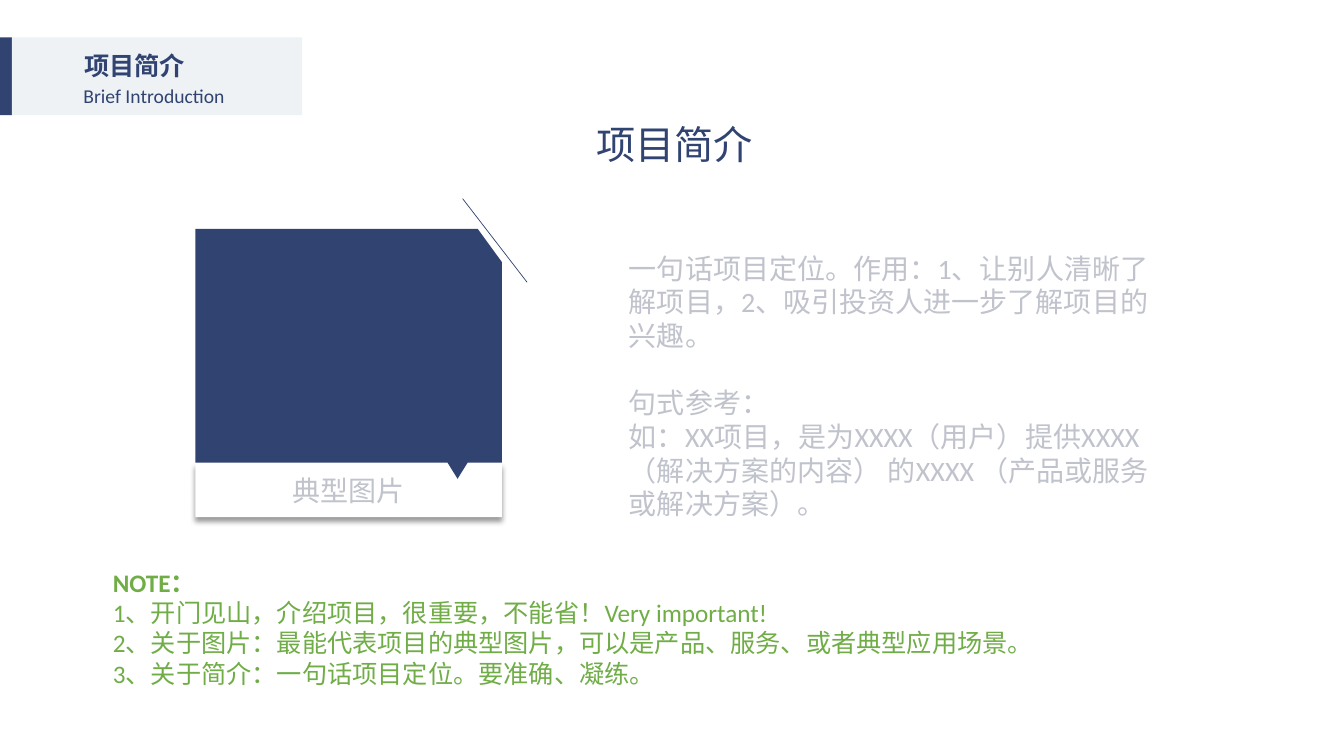
from lxml import etree
from pptx import Presentation
from pptx.dml.color import RGBColor
from pptx.enum.shapes import MSO_CONNECTOR, MSO_SHAPE
from pptx.enum.text import MSO_ANCHOR, MSO_AUTO_SIZE, PP_ALIGN
from pptx.oxml.ns import qn
from pptx.util import Inches, Pt

NAVY = RGBColor(0x30, 0x43, 0x71)
MIST = RGBColor(0xEE, 0xF2, 0xF5)
GREY = RGBColor(0xC0, 0xC2, 0xCC)
GREEN = RGBColor(0x70, 0xAD, 0x47)
WHITE = RGBColor(0xFF, 0xFF, 0xFF)
LATIN, HAN = "Calibri", "Noto Sans CJK SC"
LEFT, CENTER = PP_ALIGN.LEFT, PP_ALIGN.CENTER
TOP, MIDDLE = MSO_ANCHOR.TOP, MSO_ANCHOR.MIDDLE
NO_FIT = MSO_AUTO_SIZE.NONE
RECT, STRAIGHT = MSO_SHAPE.RECTANGLE, MSO_CONNECTOR.STRAIGHT
COLS, ROWS = 64, 36


class Deck:
    """Draws styled elements on the current slide, placed on a 64 by 36 grid."""

    def __init__(self):
        self.prs = Presentation()
        self.prs.slide_width, self.prs.slide_height = Inches(13.33), Inches(7.5)
        self.slide = self.prs.slides.add_slide(self.prs.slide_layouts[1])
        self.shapes = self.slide.shapes

    def at(self, col, row):
        return (int(self.prs.slide_width * col / COLS),
                int(self.prs.slide_height * row / ROWS))

    def box(self, col, row, cols, rows):
        return self.at(col, row) + self.at(cols, rows)

    def paint(self, sp, color):
        sp.shadow.inherit = False
        sp.fill.solid()
        sp.fill.fore_color.rgb = color
        sp.line.fill.background()
        return sp

    def set_text(self, sp, lines, size, color, font=LATIN, align=LEFT,
                 anchor=TOP, bold=False, wrap=True):
        tf = sp.text_frame
        tf.text = "\n".join(lines)
        tf.word_wrap, tf.auto_size, tf.vertical_anchor = wrap, NO_FIT, anchor
        for p in tf.paragraphs:
            p.alignment, p.space_before = align, Pt(0)
            p.font.size, p.font.name, p.font.bold = Pt(size), font, bold
            p.font.color.rgb = color
            for r in p.runs:
                r_pr = r._r.get_or_add_rPr()
                etree.SubElement(r_pr, qn("a:ea"), typeface=font)
        return tf

    def rect(self, *box, color):
        return self.paint(self.shapes.add_shape(RECT, *self.box(*box)), color)

    def polygon(self, points, color):
        start, *rest = [self.at(*point) for point in points]
        builder = self.shapes.build_freeform(*start)
        builder.add_line_segments(rest, close=True)
        return self.paint(builder.convert_to_shape(), color)

    def line(self, start, end, color, width):
        sp = self.shapes.add_connector(STRAIGHT, *self.at(*start), *self.at(*end))
        sp.line.color.rgb, sp.line.width = color, Pt(width)
        etree.SubElement(sp._element.spPr, qn("a:effectLst"))
        return sp

    def text(self, *box, lines, **style):
        return self.set_text(self.shapes.add_textbox(*self.box(*box)), lines, **style)

    def placeholder(self, idx, *box, lines, **style):
        sp = self.slide.placeholders[idx]
        sp.left, sp.top, sp.width, sp.height = self.box(*box)
        return self.set_text(sp, lines, **style)

    def remove_bullets(self, tf):
        for p in tf.paragraphs:
            p_pr = p._p.get_or_add_pPr()
            p_pr.set("marL", "0")
            p_pr.set("indent", "0")
            p_pr.find(qn("a:defRPr")).addprevious(etree.Element(qn("a:buNone")))

    def drop_shadow(self, sp):
        effects = sp._element.spPr.find(qn("a:effectLst"))
        shadow = etree.SubElement(effects, qn("a:outerShdw"), blurRad=str(Pt(4)),
                                  dist=str(Pt(3)), dir="5400000", rotWithShape="0")
        black = etree.SubElement(shadow, qn("a:srgbClr"), val="000000")
        etree.SubElement(black, qn("a:alpha"), val="40000")


def main():
    deck = Deck()

    deck.rect(-0.1, 1.78, 0.67, 3.7, color=NAVY)
    deck.rect(0.57, 1.78, 13.82, 3.7, color=MIST)
    deck.text(3.5, 2.16, 5.81, 1.92, lines=["项目简介"], size=18, color=NAVY,
              font=HAN, align=CENTER, bold=True, wrap=False)
    deck.text(3.5, 3.74, 10.42, 1.63, lines=["Brief Introduction"], size=14,
              color=NAVY)

    left, right, top, bottom = 9.31, 23.9, 10.9, 22.03
    caption = deck.rect(left, bottom, right - left, 2.59, color=WHITE)
    deck.drop_shadow(caption)
    deck.set_text(caption, ["典型图片"], 20, GREY, align=CENTER, anchor=MIDDLE)
    tip = 21.79
    panel = deck.polygon([(left, top), (22.75, top), (right, 12.48), (right, bottom),
                          (tip + 0.48, bottom), (tip, 22.8), (tip - 0.48, bottom),
                          (left, bottom)], NAVY)
    slash = deck.line((22.03, 9.46), (25.1, 13.44), NAVY, 0.5)
    deck.shapes.add_group_shape([caption, panel, slash])

    title = deck.placeholder(0, 20.54, 4.56, 23.18, 3.46, lines=["项目简介"], size=28,
                             color=NAVY, font=HAN, align=CENTER, anchor=MIDDLE)
    title.paragraphs[0].line_spacing = 1.5

    note = deck.text(4.9, 26.78, 56.78, 6.29, size=18, color=GREEN, lines=[
        "NOTE：",
        "1、开门见山，介绍项目，很重要，不能省！Very important!",
        "2、关于图片：最能代表项目的典型图片，可以是产品、服务、或者典型应用场景。",
        "3、关于简介：一句话项目定位。要准确、凝练。"])
    note.paragraphs[0].font.bold = True

    body = deck.placeholder(1, 29.47, 11.73, 26.21, 13.4, size=20, color=GREY, lines=[
        "一句话项目定位。作用：1、让别人清晰了解项目，2、吸引投资人进一步了解项目的兴趣。",
        "句式参考：",
        "如：XX项目，是为XXXX（用户）提供XXXX（解决方案的内容） 的XXXX （产品或服务或解决方案）。"])
    deck.remove_bullets(body)
    body.paragraphs[1].space_before = Pt(24)

    deck.prs.save("out.pptx")


if __name__ == "__main__":
    main()
